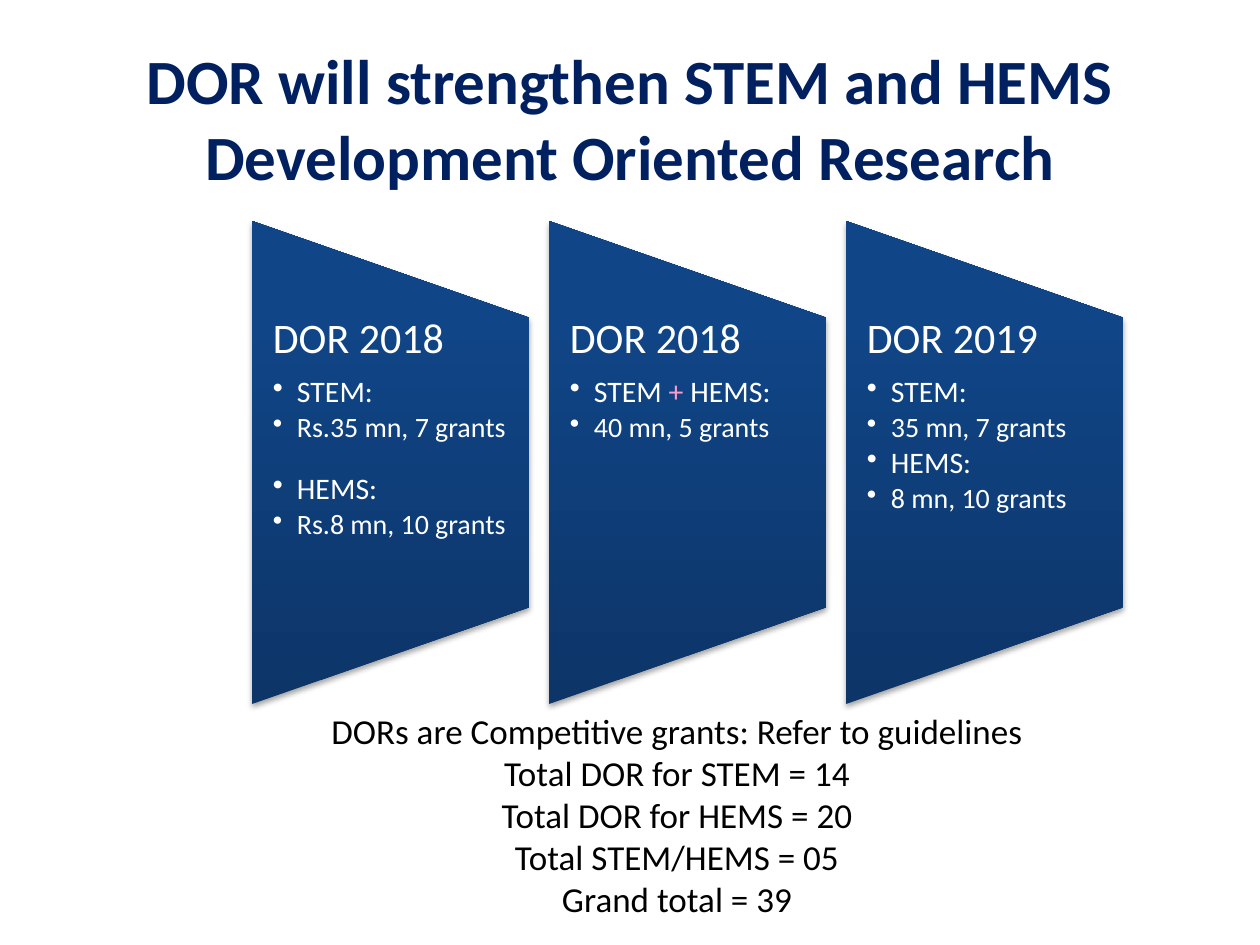
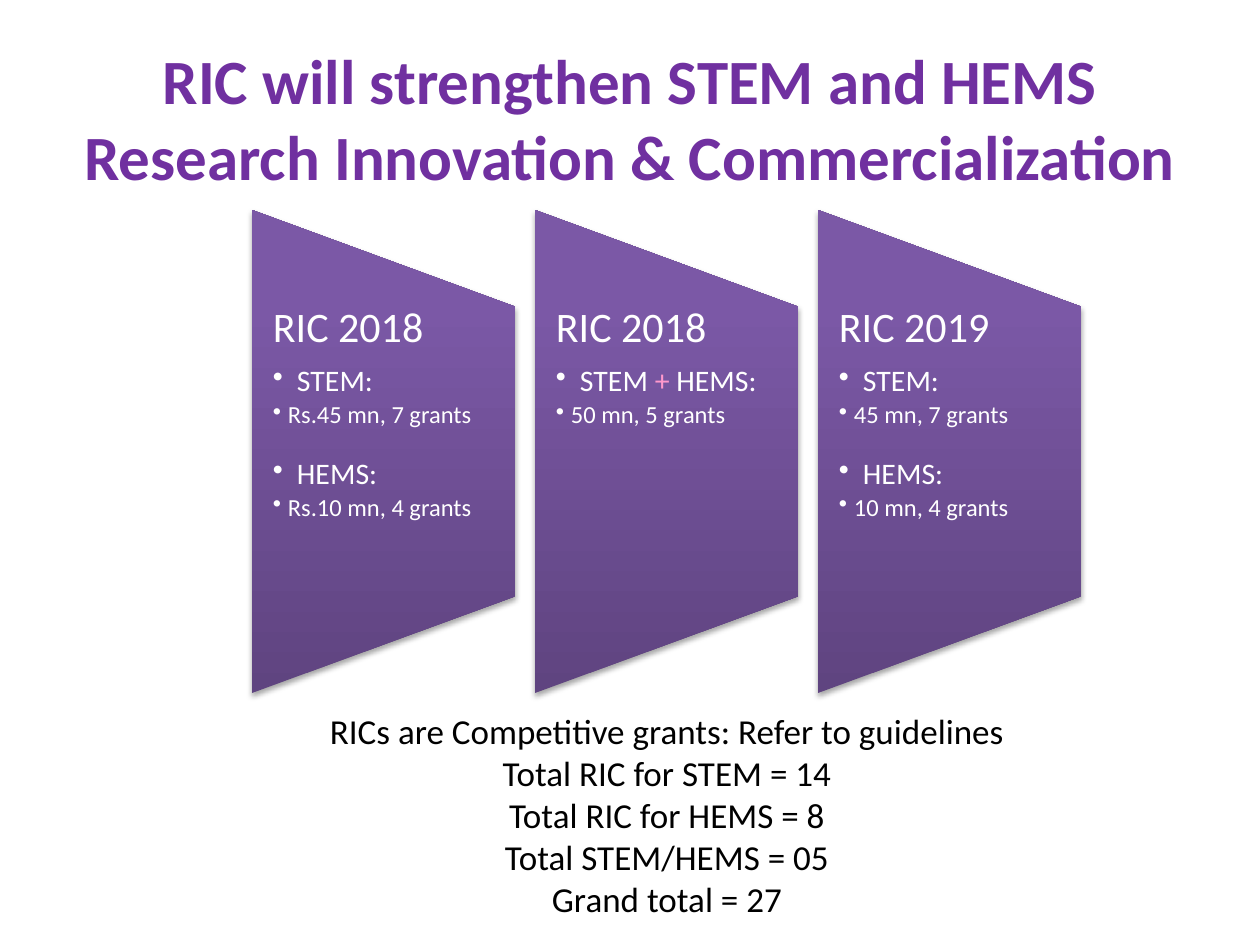
"""Build two slides on the DOR and RIC competitive grants."""
from lxml import etree
from pptx import Presentation
from pptx.dml.color import RGBColor
from pptx.enum.shapes import MSO_SHAPE as Shape
from pptx.enum.text import MSO_ANCHOR as Anchor, PP_ALIGN as Align
from pptx.oxml import parse_xml
from pptx.oxml.ns import nsdecls, qn
from pptx.util import Pt

PX = 914400 / 126
FONT = "Calibri"
NAVY = RGBColor(0x00, 0x20, 0x60)
PURPLE = RGBColor(0x70, 0x30, 0xA0)
WHITE = RGBColor(0xFF, 0xFF, 0xFF)
BLACK = RGBColor(0x00, 0x00, 0x00)
PINK = RGBColor(0xFF, 0x99, 0xCC)
BLUE_SHADES = [
    (0, RGBColor(0x0D, 0x35, 0x68)),
    (80, RGBColor(0x10, 0x45, 0x87)),
    (100, RGBColor(0x0E, 0x45, 0x8A)),
]
VIOLET_SHADES = [
    (0, RGBColor(0x5F, 0x44, 0x80)),
    (80, RGBColor(0x7B, 0x58, 0xA6)),
    (100, RGBColor(0x7C, 0x57, 0xA8)),
]
SHADOW = (
    f'<a:effectLst {nsdecls("a")}><a:outerShdw blurRad="39370" dist="22860" '
    'dir="5400000" rotWithShape="0"><a:srgbClr val="000000">'
    '<a:alpha val="35000"/></a:srgbClr></a:outerShdw></a:effectLst>'
)
PANEL_HEIGHT = 483
TEXT_DROP = 96
BLANK_LINE = 15


def px(*lengths):
    return [round(length * PX) for length in lengths]


def write(frame, text, size, color, bold=False, align=Align.LEFT, spacing=None,
          before=0, after=0, indent=0):
    para = frame.add_paragraph() if frame.text else frame.paragraphs[0]
    para.alignment = align
    para.space_before, para.space_after = Pt(before), Pt(after)
    if spacing:
        para.line_spacing = spacing
    if indent:
        para.level = 1
        props = para._p.get_or_add_pPr()
        margin, = px(indent)
        props.set("marL", str(margin))
        props.set("indent", str(-margin))
        etree.SubElement(props, qn("a:buChar")).set("char", "•")
    for row, line in enumerate(text.split("\n")):
        if row:
            para.add_line_break()
        for piece in filter(None, line.partition("+")):
            run = para.add_run()
            run.text = piece
            run.font.name, run.font.size, run.font.bold = FONT, Pt(size), bold
            run.font.color.rgb = PINK if piece == "+" else color


programmes = [
    dict(
        title="DOR will strengthen STEM and HEMS\nDevelopment Oriented Research",
        title_color=NAVY, shades=BLUE_SHADES,
        top=221, width=277, pitch=297, amount_size=16, amount_indent=24,
        panels=[
            ("DOR 2018", BLANK_LINE,
             ["STEM:", "Rs.35 mn, 7 grants", "HEMS:", "Rs.8 mn, 10 grants"]),
            ("DOR 2018", 0, ["STEM + HEMS:", "40 mn, 5 grants"]),
            ("DOR 2019", 0,
             ["STEM:", "35 mn, 7 grants", "HEMS:", "8 mn, 10 grants"]),
        ],
        totals_left=168,
        totals=["DORs are Competitive grants: Refer to guidelines",
                "Total DOR for STEM = 14", "Total DOR for HEMS = 20",
                "Total STEM/HEMS = 05", "Grand total = 39"],
    ),
    dict(
        title="RIC will strengthen STEM and HEMS\nResearch Innovation & Commercialization",
        title_color=PURPLE, shades=VIOLET_SHADES,
        top=210, width=263, pitch=283, amount_size=14, amount_indent=15,
        panels=[
            ("RIC 2018", BLANK_LINE,
             ["STEM:", "Rs.45 mn, 7 grants", "HEMS:", "Rs.10 mn, 4 grants"]),
            ("RIC 2018", 0, ["STEM + HEMS:", "50 mn, 5 grants"]),
            ("RIC 2019", BLANK_LINE,
             ["STEM:", "45 mn, 7 grants", "HEMS:", "10 mn, 4 grants"]),
        ],
        totals_left=158,
        totals=["RICs are Competitive grants: Refer to guidelines",
                "Total RIC for STEM = 14", "Total RIC for HEMS = 8",
                "Total STEM/HEMS = 05", "Grand total = 27"],
    ),
]

prs = Presentation()
prs.slide_width, prs.slide_height = px(1260, 945)

for programme in programmes:
    shapes = prs.slides.add_slide(prs.slide_layouts[6]).shapes

    heading = shapes.add_textbox(*px(63, 38, 1134, 158)).text_frame
    heading.word_wrap = True
    heading.vertical_anchor = Anchor.MIDDLE
    write(heading, programme["title"], 36, programme["title_color"],
          bold=True, align=Align.CENTER)

    top, width = programme["top"], programme["width"]
    stops = "".join(f'<a:gs pos="{percent * 1000}"><a:srgbClr val="{shade}"/></a:gs>'
                    for percent, shade in programme["shades"])
    gradient = (f'<a:gradFill {nsdecls("a")} rotWithShape="0"><a:gsLst>{stops}</a:gsLst>'
                '<a:lin ang="16200000" scaled="0"/></a:gradFill>')

    for column, (year, gap, grants) in enumerate(programme["panels"]):
        left = 252 + column * programme["pitch"]
        turn = (PANEL_HEIGHT - width) / 2
        panel = shapes.add_shape(Shape.FLOWCHART_MANUAL_OPERATION,
                                 *px(left - turn, top + turn, PANEL_HEIGHT, width))
        panel.rotation = 270
        panel.line.fill.background()
        outline = panel._element.spPr.find(qn("a:ln"))
        outline.addprevious(parse_xml(gradient))
        outline.addnext(parse_xml(SHADOW))

        details = shapes.add_textbox(*px(left, top + TEXT_DROP, width, 290)).text_frame
        details.word_wrap = True
        details.margin_left, details.margin_right = px(21, 21)
        details.margin_top = details.margin_bottom = 0
        write(details, year, 24, WHITE, spacing=0.9, after=8.4)
        for grant in grants:
            is_field = grant.endswith(":")
            size = 17 if is_field else programme["amount_size"]
            write(details, grant, size, WHITE, spacing=0.9,
                  before=gap if grant == "HEMS:" else 0, after=round(size * 0.15, 1),
                  indent=24 if is_field else programme["amount_indent"])

    summary = shapes.add_textbox(*px(programme["totals_left"], 703, 1018, 227)).text_frame
    summary.word_wrap = True
    for total in programme["totals"]:
        write(summary, total, 20, BLACK, align=Align.CENTER)

prs.save("out.pptx")
